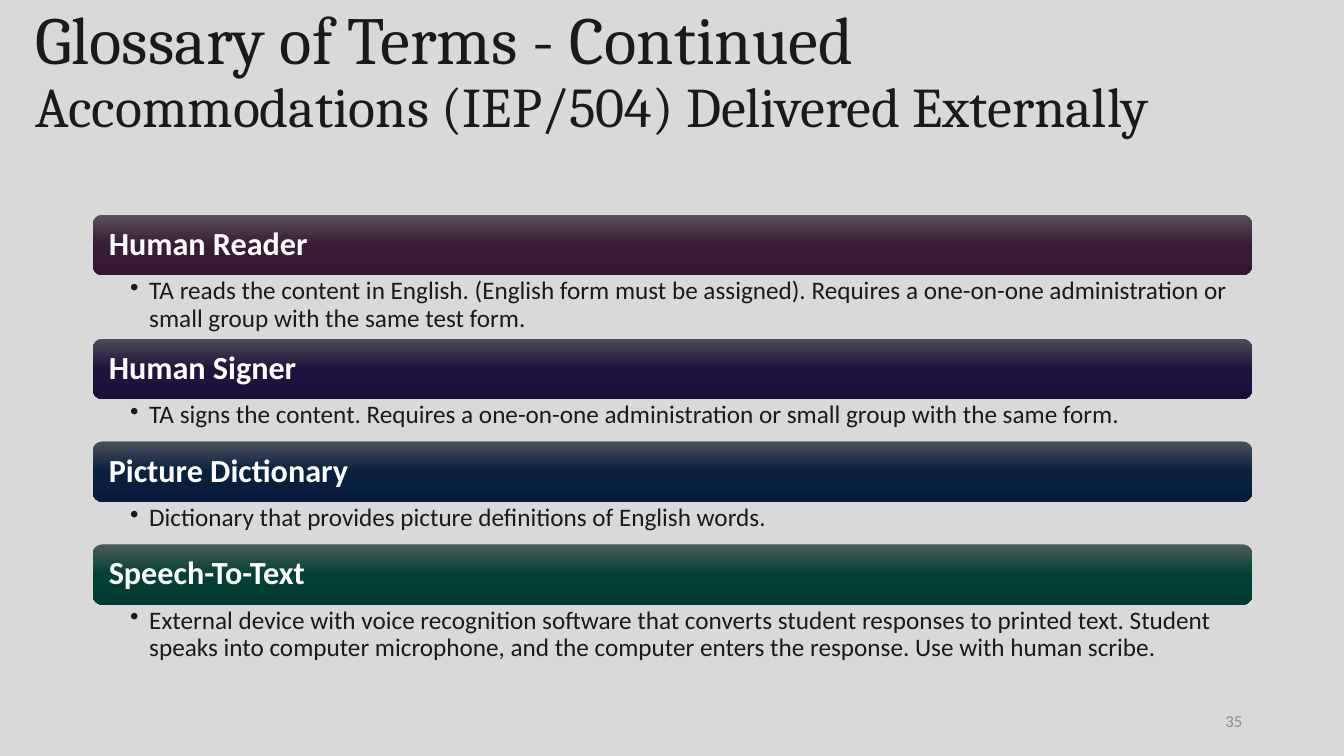
from copy import deepcopy

from pptx import Presentation
from pptx.dml.color import RGBColor
from pptx.enum.shapes import MSO_SHAPE
from pptx.enum.text import MSO_ANCHOR, PP_ALIGN
from pptx.oxml.ns import qn
from pptx.oxml.xmlchemy import OxmlElement
from pptx.util import Inches, Pt

WIDTH, HEIGHT = 13.33, 7.5
LEFT, COLUMN = 0.92, 11.5
FIRST_TOP, BAR_HEIGHT = 2.13, 0.6
NOTE_HEIGHT = {1: 0.42, 2: 0.63}  # by number of text lines
INK = "1A1A1A"

# term, gradient from top to bottom, lines in the definition, definition
TERMS = [
    ("Human Reader", ("594E58", "381C36", "331731"), 2,
     "TA reads the content in English. (English form must be assigned). "
     "Requires a one-on-one administration or small group with the same test form."),
    ("Human Signer", ("4F4C5B", "1F123C", "1B0E37"), 1,
     "TA signs the content. Requires a one-on-one administration or small group "
     "with the same form."),
    ("Picture Dictionary", ("4B4F5C", "09203F", "061C3A"), 1,
     "Dictionary that provides picture definitions of English words."),
    ("Speech-To-Text", ("4B5D57", "014035", "003A30"), 2,
     "External device with voice recognition software that converts student "
     "responses to printed text. Student speaks into computer microphone, and the "
     "computer enters the response. Use with human scribe."),
]


def color(value):
    return RGBColor.from_string(value)


def style(font, size, fill, name="Calibri", bold=False):
    font.name, font.size, font.bold = name, Pt(size), bold
    font.color.rgb = color(fill)


def set_frame(shape, insets, anchor):
    """Wrap the text, set left, top, right and bottom insets; return the first paragraph."""
    frame = shape.text_frame
    frame.word_wrap = True
    frame.vertical_anchor = anchor
    (frame.margin_left, frame.margin_top,
     frame.margin_right, frame.margin_bottom) = map(Inches, insets)
    return frame.paragraphs[0]


def add_box(page, left, top, width, height, insets=(0.1, 0.05, 0.1, 0.05),
            anchor=MSO_ANCHOR.MIDDLE):
    box = page.shapes.add_textbox(*map(Inches, (left, top, width, height)))
    return set_frame(box, insets, anchor)


def fill_gradient(shape, colors):
    """Fill from top to bottom with three evenly spaced colours."""
    shape.fill.gradient()
    shape.fill.gradient_angle = 270
    stops = shape._element.spPr.find(".//" + qn("a:gsLst"))
    stops.append(deepcopy(stops[0]))
    for index, (stop, value) in enumerate(zip(shape.fill.gradient_stops, colors)):
        stop.position = index / 2
        stop.color.rgb = color(value)


def add_bar(page, top, term, colors):
    bar = page.shapes.add_shape(MSO_SHAPE.ROUNDED_RECTANGLE,
                                *map(Inches, (LEFT, top, COLUMN, BAR_HEIGHT)))
    bar.shadow.inherit = False
    bar.line.fill.background()
    fill_gradient(bar, colors)
    para = set_frame(bar, (0.13, 0.05, 0.13, 0.05), MSO_ANCHOR.MIDDLE)
    para.text, para.alignment, para.line_spacing = term, PP_ALIGN.LEFT, 0.9
    style(para.font, 23, "FFFFFF", bold=True)


def add_bullet(para, indent):
    properties = para._p.get_or_add_pPr()
    properties.set("marL", str(Inches(indent)))
    properties.set("indent", str(-Inches(indent)))
    bullet = OxmlElement("a:buChar")
    bullet.set("char", "•")
    properties.append(bullet)


def add_note(page, top, height, text):
    para = add_box(page, LEFT, top, COLUMN, height,
                   (0.37, 0.03, 0.18, 0.03), MSO_ANCHOR.TOP)
    add_bullet(para, 0.19)
    para.text, para.line_spacing = text, 0.9
    style(para.font, 18, INK)


def add_title(page, heading, subheading):
    para = add_box(page, 0.25, 0, 12.84, 1.45)
    para.line_spacing = 0.9
    for text, size in ((heading, 48), (subheading, 40)):
        if para.runs:
            para.add_line_break()
        span = para.add_run()
        span.text = text
        style(span.font, size, INK, "Cambria")


def add_page_number(page, number):
    para = add_box(page, LEFT + COLUMN - 3, 6.95, 3, 0.4)
    para.text, para.alignment = number, PP_ALIGN.RIGHT
    style(para.font, 12, "8D8D8D")


def main():
    deck = Presentation()
    deck.slide_width, deck.slide_height = Inches(WIDTH), Inches(HEIGHT)
    page = deck.slides.add_slide(deck.slide_layouts[6])
    page.background.fill.solid()
    page.background.fill.fore_color.rgb = color("D9D9D9")

    add_title(page, "Glossary of Terms - Continued",
              "Accommodations (IEP/504) Delivered Externally")
    top = FIRST_TOP
    for term, colors, lines, definition in TERMS:
        add_bar(page, top, term, colors)
        add_note(page, top + BAR_HEIGHT, NOTE_HEIGHT[lines], definition)
        top += BAR_HEIGHT + NOTE_HEIGHT[lines]
    add_page_number(page, "35")
    deck.save("out.pptx")


if __name__ == "__main__":
    main()
